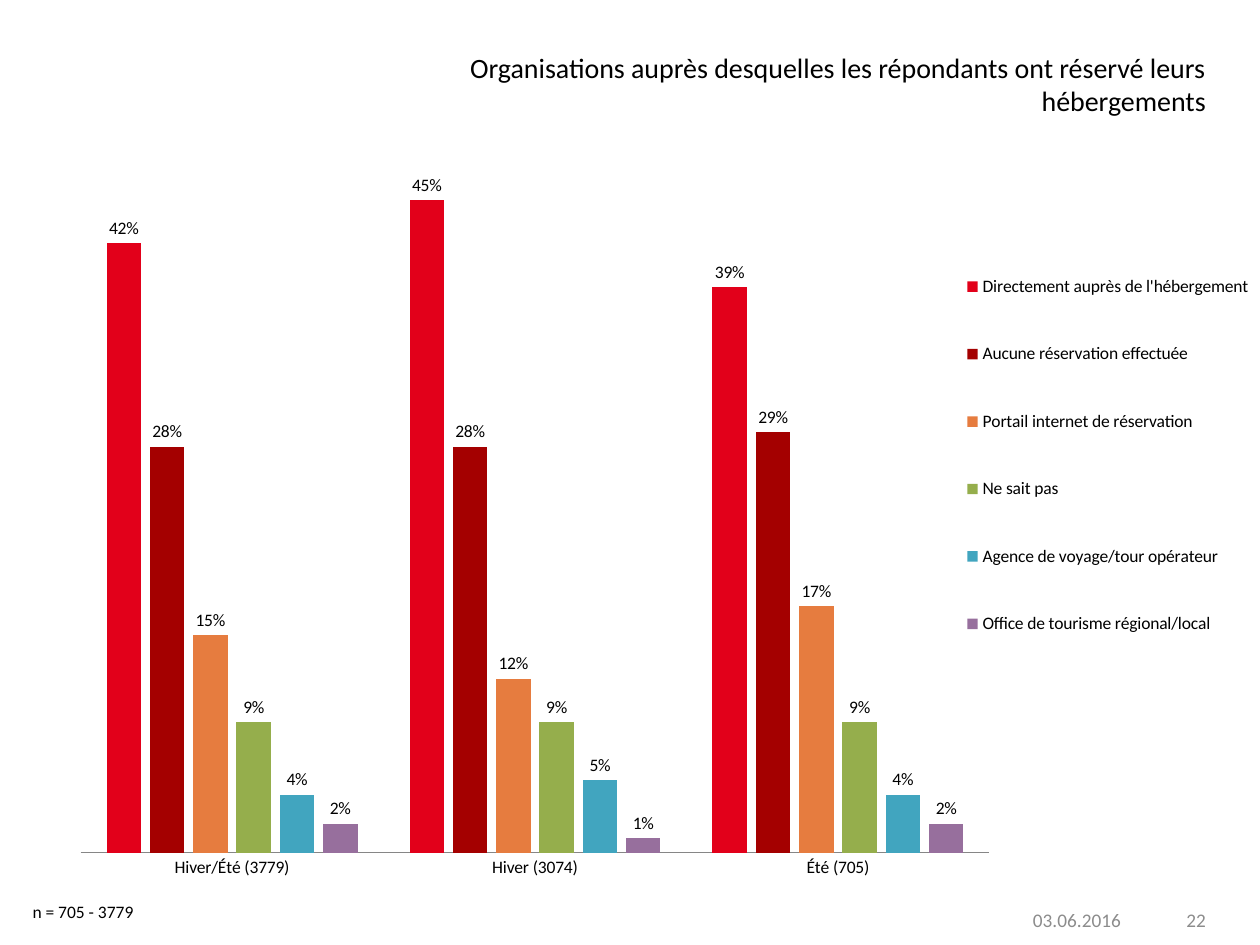
import pptx
import pptx.chart.data
import pptx.dml.color
import pptx.enum.chart
import pptx.enum.text
import pptx.oxml
import pptx.oxml.ns
import pptx.util

Inches = pptx.util.Inches
Pt = pptx.util.Pt
RGBColor = pptx.dml.color.RGBColor
Align = pptx.enum.text.PP_ALIGN
Anchor = pptx.enum.text.MSO_ANCHOR

FONT = "Calibri"
BLACK = RGBColor(0x00, 0x00, 0x00)
GRAY = RGBColor(0x8C, 0x8C, 0x8C)
AXIS_GRAY = RGBColor(0x86, 0x86, 0x86)

CATEGORIES = ["Hiver/Été (3779)", "Hiver (3074)", "Été (705)"]
SERIES = [
    ("Directement auprès de l'hébergement", (0.42, 0.45, 0.39), RGBColor(0xE2, 0x00, 0x1A)),
    ("Aucune réservation effectuée", (0.28, 0.28, 0.29), RGBColor(0xA4, 0x00, 0x00)),
    ("Portail internet de réservation", (0.15, 0.12, 0.17), RGBColor(0xE6, 0x7C, 0x3F)),
    ("Ne sait pas", (0.09, 0.09, 0.09), RGBColor(0x95, 0xAE, 0x4C)),
    ("Agence de voyage/tour opérateur", (0.04, 0.05, 0.04), RGBColor(0x41, 0xA5, 0xBF)),
    ("Office de tourisme régional/local", (0.02, 0.01, 0.02), RGBColor(0x97, 0x6F, 0x9D)),
]


def format_font(font, size, color):
    font.name = FONT
    font.size = Pt(size)
    font.color.rgb = color


def fill_text(shape, text, size, color, align, anchor):
    frame = shape.text_frame
    frame.word_wrap = True
    frame.auto_size = pptx.enum.text.MSO_AUTO_SIZE.NONE
    frame.vertical_anchor = anchor
    paragraph = frame.paragraphs[0]
    paragraph.text = text
    paragraph.alignment = align
    format_font(paragraph.font, size, color)


def add_title(slide, left, top, width, height):
    title = slide.shapes.title
    title.left, title.top, title.width, title.height = left, top, width, height
    fill_text(title, "Organisations auprès desquelles les répondants ont réservé leurs hébergements",
              16, BLACK, Align.RIGHT, Anchor.TOP)


def add_label(slide, box, text, size, color, align=Align.LEFT, anchor=Anchor.MIDDLE):
    fill_text(slide.shapes.add_textbox(*box), text, size, color, align, anchor)


def layout_element(x, y, width, height, inner=False):
    """Manual chart layout, in fractions of the chart box."""
    target = '<c:layoutTarget val="inner"/>' if inner else ""
    return pptx.oxml.parse_xml(
        f'<c:layout {pptx.oxml.ns.nsdecls("c")}><c:manualLayout>{target}'
        '<c:xMode val="edge"/><c:yMode val="edge"/>'
        f'<c:x val="{x}"/><c:y val="{y}"/><c:w val="{width}"/><c:h val="{height}"/>'
        '</c:manualLayout></c:layout>')


def replace_layout(parent, layout, after=None):
    for old_layout in parent.findall(pptx.oxml.ns.qn("c:layout")):
        parent.remove(old_layout)
    if after is None:
        parent.insert(0, layout)
    else:
        parent.find(pptx.oxml.ns.qn(after)).addnext(layout)


def add_booking_chart(slide, left, top, width, height):
    data = pptx.chart.data.CategoryChartData(number_format="0%")
    data.categories = CATEGORIES
    for name, values, _ in SERIES:
        data.add_series(name, values)
    chart = slide.shapes.add_chart(
        pptx.enum.chart.XL_CHART_TYPE.COLUMN_CLUSTERED, left, top, width, height, data).chart
    chart.has_title = False
    format_font(chart.font, 10, BLACK)

    # Columns and their value labels
    plot = chart.plots[0]
    plot.vary_by_categories = False
    plot.gap_width = 150
    plot.overlap = -25
    for series, (_, _, color) in zip(plot.series, SERIES):
        series.format.fill.solid()
        series.format.fill.fore_color.rgb = color
        labels = series.data_labels
        labels.show_value = True
        labels.number_format = "0%"
        labels.number_format_is_linked = False
        labels.position = pptx.enum.chart.XL_LABEL_POSITION.OUTSIDE_END

    # Axes
    category_axis = chart.category_axis
    category_axis.major_tick_mark = pptx.enum.chart.XL_TICK_MARK.NONE
    category_axis.format.line.color.rgb = AXIS_GRAY
    category_axis.format.line.width = Pt(0.75)
    value_axis = chart.value_axis
    value_axis.minimum_scale = 0
    value_axis.maximum_scale = 0.5
    value_axis.has_major_gridlines = False
    value_axis.tick_labels.number_format = "0.00%"
    value_axis.tick_labels.number_format_is_linked = False
    value_axis.visible = False

    # Legend and plot area
    chart.has_legend = True
    legend = chart.legend
    legend.position = pptx.enum.chart.XL_LEGEND_POSITION.RIGHT
    legend.include_in_layout = False
    format_font(legend.font, 10, BLACK)
    replace_layout(legend._element, layout_element(0.75, 0.16, 0.25, 0.57), "c:legendPos")
    plot_area = chart._chartSpace.chart.plotArea
    replace_layout(plot_area, layout_element(0.032, 0.032, 0.746, 0.914, inner=True))


def add_footer(slide, top, height):
    add_label(slide, (Inches(8.1), top, Inches(1), height), "03.06.2016", 11, GRAY)
    add_label(slide, (Inches(7.34), top, Inches(2.33), height), "22", 11, GRAY, Align.RIGHT)
    add_label(slide, (Inches(0.16), top, Inches(1.39), Inches(0.27)),
              "n = 705 - 3779", 10, BLACK, anchor=Anchor.TOP)


def main():
    presentation = pptx.Presentation()
    presentation.slide_width = Inches(10)
    presentation.slide_height = Inches(7.5)
    slide = presentation.slides.add_slide(presentation.slide_layouts[5])
    add_footer(slide, Inches(7.1), Inches(0.4))
    add_title(slide, Inches(3.14), Inches(0.35), Inches(6.53), Inches(0.64))
    add_booking_chart(slide, Inches(0.33), Inches(0.81), Inches(9.67), Inches(6.3))
    presentation.save("out.pptx")


if __name__ == "__main__":
    main()
